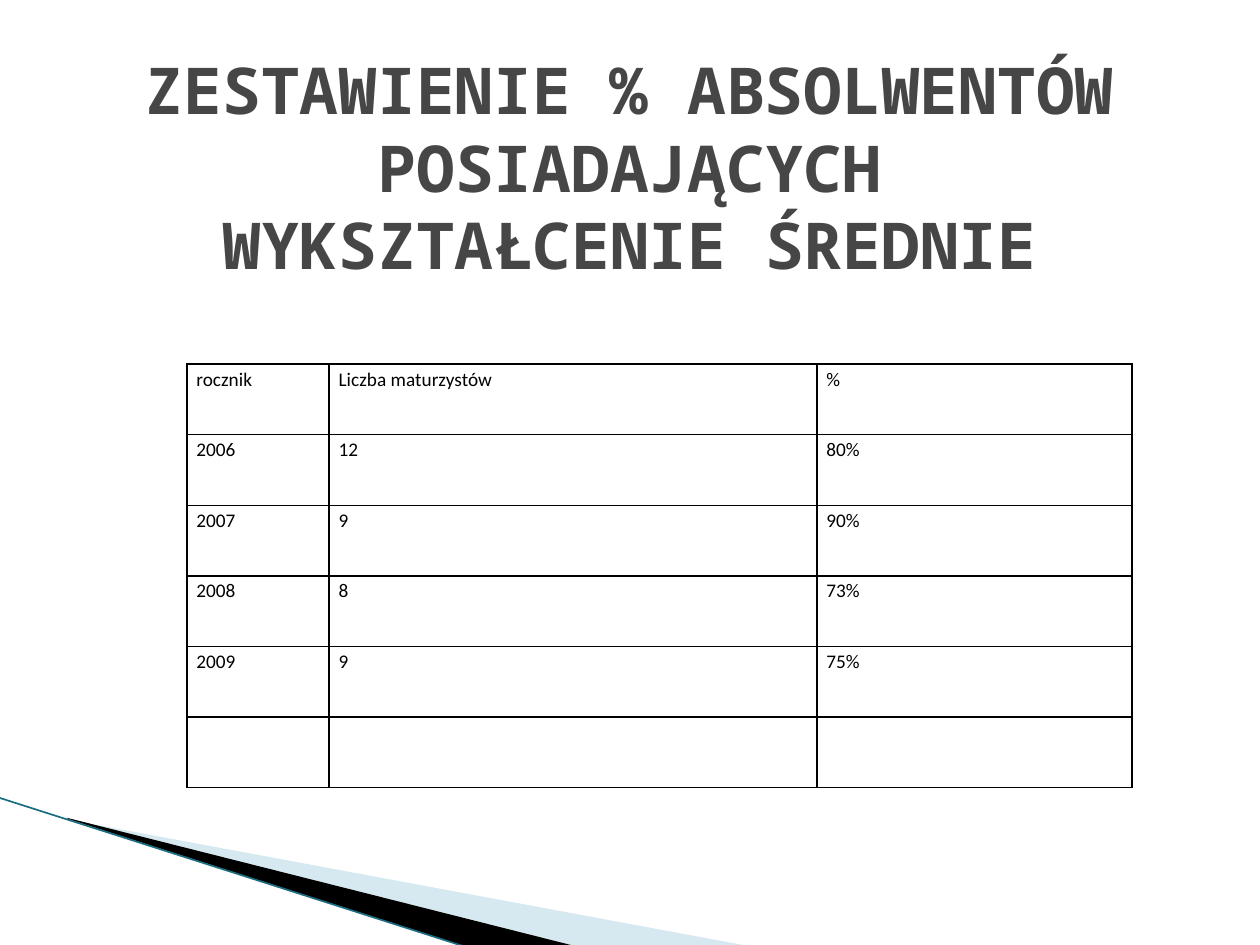
from lxml import etree
from pptx import Presentation
from pptx.dml.color import RGBColor
from pptx.enum.shapes import MSO_CONNECTOR
from pptx.enum.text import MSO_ANCHOR, PP_ALIGN
from pptx.oxml.ns import qn
from pptx.util import Pt

STRAIGHT = MSO_CONNECTOR.STRAIGHT
MIDDLE = MSO_ANCHOR.MIDDLE
LEFT, CENTER = PP_ALIGN.LEFT, PP_ALIGN.CENTER


def color(value):
    return RGBColor.from_string(value)


def write(frame, text, font, size, fill, bold=False, align=LEFT, spacing=1.0):
    paragraph = frame.paragraphs[0]
    paragraph.text = text
    paragraph.alignment = align
    paragraph.line_spacing = spacing
    paragraph.font.name = font
    paragraph.font.size = Pt(size)
    paragraph.font.bold = bold
    paragraph.font.color.rgb = color(fill)


prs = Presentation()
prs.slide_width, prs.slide_height = Pt(720), Pt(540)
slide = prs.slides.add_slide(prs.slide_layouts[6])
shapes = slide.shapes

wedges = [
    ("A0CBDC", 41, (56.2, 393.8, 299.5, 113.8),
     [(39.6, 468.5), (428.4, 540.7), (328.3, 540.7), (39.6, 468)]),
    ("000000", 100, (-4.3, 455.8, 299.5, 66.2),
     [(38.2, 467.3), (329, 540.7), (267.8, 541.4), (38.9, 468)]),
]
for fill, opacity, bounds, corners in wedges:
    points = [(Pt(x), Pt(y)) for x, y in corners]
    outline = shapes.build_freeform(*points[0])
    outline.add_line_segments(points[1:], close=True)
    wedge = outline.convert_to_shape()
    left, top, width, height = [Pt(length) for length in bounds]
    route = next(wedge._element.iter(qn("a:path")))
    for point in route.iter(qn("a:pt")):
        point.set("x", str(int(point.get("x")) + wedge.left - left))
        point.set("y", str(int(point.get("y")) + wedge.top - top))
    route.set("w", str(width))
    route.set("h", str(height))
    wedge.left, wedge.top, wedge.width, wedge.height = left, top, width, height
    wedge.shadow.inherit = False
    wedge.fill.solid()
    wedge.fill.fore_color.rgb = color(fill)
    wedge.line.fill.background()
    if opacity < 100:
        tint = wedge._element.spPr.find(qn("a:solidFill"))[0]
        etree.SubElement(tint, qn("a:alpha"), val=str(opacity * 1000))

edge = shapes.add_connector(STRAIGHT, Pt(-0.7), Pt(455.8), Pt(267.1), Pt(541.4))
edge.line.color.rgb = color("1A6E80")
edge.line.width = Pt(0.95)
etree.SubElement(edge._element.spPr, qn("a:effectLst"))

title = shapes.add_textbox(Pt(36), Pt(21.6), Pt(648), Pt(146.9)).text_frame
title.word_wrap = True
title.vertical_anchor = MIDDLE
write(title, "ZESTAWIENIE % ABSOLWENTÓW POSIADAJĄCYCH\vWYKSZTAŁCENIE ŚREDNIE",
      font="Noto Sans Mono", size=36.9, fill="464646", bold=True, align=CENTER)

results = [
    ("rocznik", "Liczba maturzystów", "%"),
    ("2006", "12", "80%"),
    ("2007", "9", "90%"),
    ("2008", "8", "73%"),
    ("2009", "9", "75%"),
    ("", "", ""),
]
widths = [81.3, 278.7, 180]
row_height = 40.35
table = shapes.add_table(len(results), len(widths), Pt(106.85), Pt(208.1),
                         Pt(sum(widths)), Pt(row_height * len(results))).table
table.first_row = table.horz_banding = False
for column, width in zip(table.columns, widths):
    column.width = Pt(width)
for row, values in zip(table.rows, results):
    row.height = Pt(row_height)
    for cell, value in zip(row.cells, values):
        cell.margin_left = cell.margin_right = Pt(5.4)
        cell.margin_top = cell.margin_bottom = 0
        write(cell.text_frame, value, font="Calibri", size=11, fill="000000",
              spacing=1.15)
        properties = cell._tc.get_or_add_tcPr()
        for side in ("lnL", "lnR", "lnT", "lnB"):
            border = etree.SubElement(properties, qn("a:" + side), w=str(Pt(1)))
            ink = etree.SubElement(border, qn("a:solidFill"))
            etree.SubElement(ink, qn("a:srgbClr"), val="000000")
        cell.fill.background()

prs.save("out.pptx")
